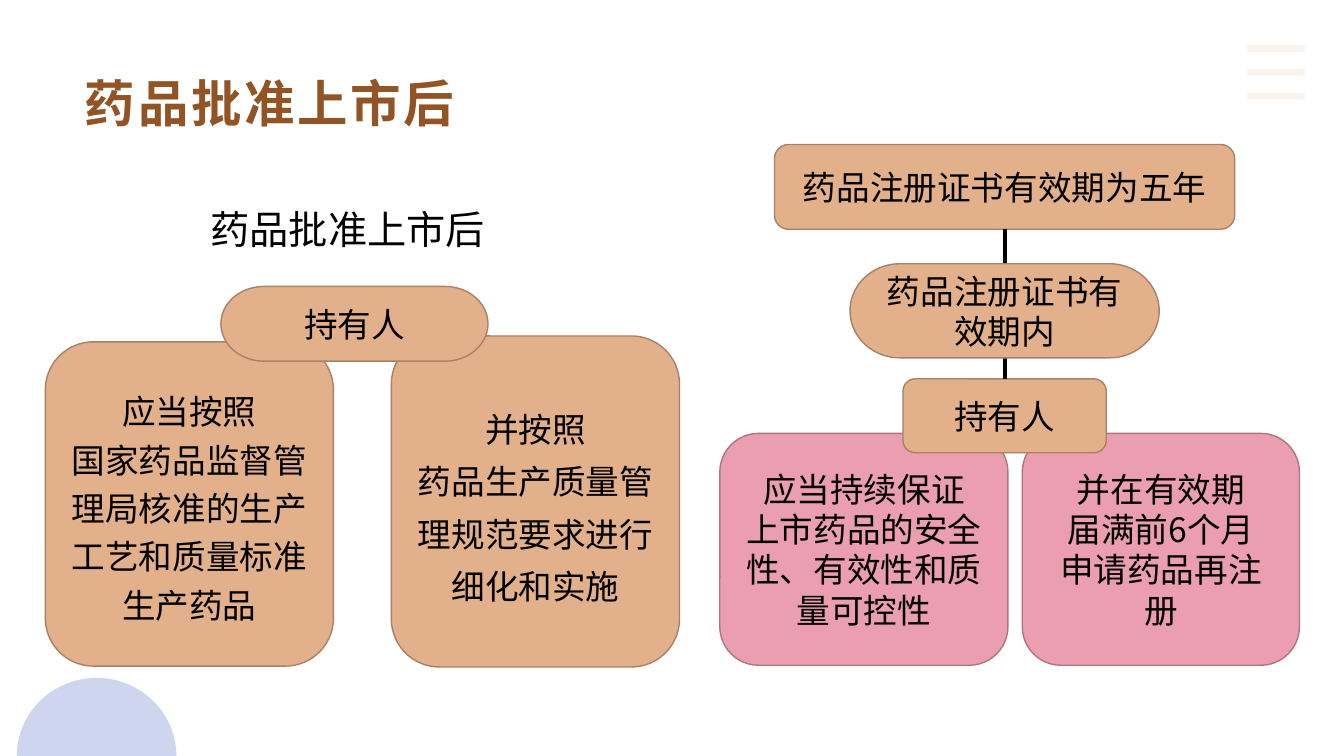
from math import cos, pi, sin

from lxml.etree import SubElement
from pptx import Presentation
from pptx.dml.color import RGBColor
from pptx.enum.shapes import MSO_CONNECTOR, MSO_SHAPE
from pptx.enum.text import MSO_ANCHOR, PP_ALIGN
from pptx.oxml.ns import qn
from pptx.util import Inches, Pt

SAND = RGBColor(0xE2, 0xB0, 0x8A)
SAND_EDGE = RGBColor(0xA7, 0x82, 0x66)
PINK = RGBColor(0xEB, 0x9E, 0xAF)
PINK_EDGE = RGBColor(0xAE, 0x75, 0x81)
BROWN = RGBColor(0x92, 0x54, 0x24)
PERIWINKLE = RGBColor(0x9F, 0xAE, 0xE0)
BLACK = RGBColor(0, 0, 0)
COLUMNS, ROWS = 160, 90
ROUNDED = MSO_SHAPE.ROUNDED_RECTANGLE
PILL = MSO_SHAPE.FLOWCHART_TERMINATOR


class SlideBuilder:
    typeface = "Noto Sans CJK SC"

    def __init__(self, deck):
        self.column = deck.slide_width / COLUMNS
        self.row = deck.slide_height / ROWS
        self.page = deck.slides.add_slide(deck.slide_layouts[5])

    def place(self, columns, rows):
        return round(columns * self.column), round(rows * self.row)

    def area(self, left, top, width, height):
        return *self.place(left, top), *self.place(width, height)

    def fade(self, element, percent):
        for color in element.iter(qn("a:srgbClr")):
            SubElement(color, qn("a:alpha")).set("val", str(percent * 1000))

    def set_text(self, frame, lines, size=24, color=BLACK, bold=False,
                 align=PP_ALIGN.CENTER, spacing=1.0, tracking=0):
        frame.word_wrap = True
        frame.text = "\n".join(lines)
        for para in frame.paragraphs:
            para.alignment = align
            para.line_spacing = spacing
            font = para.font
            font.name = self.typeface
            font.size = Pt(size)
            font.bold = bold
            font.color.rgb = color
            properties = para._p.pPr.find(qn("a:defRPr"))
            SubElement(properties, qn("a:ea")).set("typeface", self.typeface)
            if tracking:
                properties.set("spc", str(tracking * 100))

    def title(self, area, text):
        box = self.page.shapes.title
        box.left, box.top, box.width, box.height = self.area(*area)
        box.text_frame.vertical_anchor = MSO_ANCHOR.TOP
        self.set_text(box.text_frame, [text], 36, BROWN, True, PP_ALIGN.LEFT, tracking=2)

    def caption(self, area, text):
        box = self.page.shapes.add_textbox(*self.area(*area))
        self.set_text(box.text_frame, [text], 28, align=PP_ALIGN.LEFT)

    def box(self, kind, area, lines, fill=SAND, edge=SAND_EDGE, spacing=1.0):
        box = self.page.shapes.add_shape(kind, *self.area(*area))
        box.shadow.inherit = False
        box.fill.solid()
        box.fill.fore_color.rgb = fill
        box.line.color.rgb = edge
        box.line.width = Pt(1)
        box.text_frame.vertical_anchor = MSO_ANCHOR.MIDDLE
        self.set_text(box.text_frame, lines, spacing=spacing)
        return box

    def line(self, start, end, color, width):
        line = self.page.shapes.add_connector(
            MSO_CONNECTOR.STRAIGHT, *self.place(*start), *self.place(*end))
        line.line.color.rgb = color
        line.line.width = Pt(width)
        SubElement(line._element.spPr, qn("a:effectLst"))
        return line

    def dome(self, center, base, across, height, steps=60):
        angles = [pi * step / steps for step in range(steps + 1)]
        points = [self.place(center + across * cos(angle), base - height * sin(angle))
                  for angle in angles]
        outline = self.page.shapes.build_freeform(*points[0])
        outline.add_line_segments(points[1:])
        dome = outline.convert_to_shape()
        dome.shadow.inherit = False
        dome.fill.solid()
        dome.fill.fore_color.rgb = PERIWINKLE
        dome.line.fill.background()
        self.fade(dome._element.spPr, 50)


def main():
    deck = Presentation()
    deck.slide_width, deck.slide_height = Inches(13.33), Inches(7.5)
    slide = SlideBuilder(deck)

    for index in range(3):
        height = 5.76 + index * 2.84
        bar = slide.line((148.5, height), (155.3, height), SAND, 5)
        slide.fade(bar._element.spPr, 15)
    slide.dome(11.5, ROWS, 9.5, 9.3)
    slide.title((8.9, 8, 112.8, 17.3), "药品批准上市后")

    slide.box(ROUNDED, (5.4, 40.7, 34.3, 38.6),
              ["应当按照", "国家药品监督管理局核准的生产工艺和质量标准生产药品"], spacing=1.2)
    slide.box(ROUNDED, (46.6, 40, 34.3, 39.4),
              ["并按照", "药品生产质量管理规范要求进行细化和实施"], spacing=1.3)
    slide.box(PILL, (26.3, 34.1, 31.8, 8.9), ["持有人"])
    slide.caption((23.9, 23.8, 36.5, 6.8), "药品批准上市后")

    slide.box(ROUNDED, (121.7, 51.6, 33, 27.6),
              ["并在有效期", "届满前6个月", "申请药品再注册"], PINK, PINK_EDGE)
    slide.box(ROUNDED, (85.7, 51.6, 34.3, 27.6),
              ["应当持续保证", "上市药品的安全性、有效性和质量可控性"], PINK, PINK_EDGE)
    validity = slide.box(ROUNDED, (92.2, 17.2, 54.8, 10.1), ["药品注册证书有效期为五年"])
    holder = slide.box(ROUNDED, (107.5, 45.1, 24.2, 8.8), ["持有人"])
    link = slide.line((119.6, 27.3), (119.6, 45.1), BLACK, 3)
    link.begin_connect(validity, 2)
    link.end_connect(holder, 0)
    slide.box(PILL, (101.2, 31.4, 36.8, 11.2), ["药品注册证书有效期内"])

    deck.save("out.pptx")


if __name__ == "__main__":
    main()
